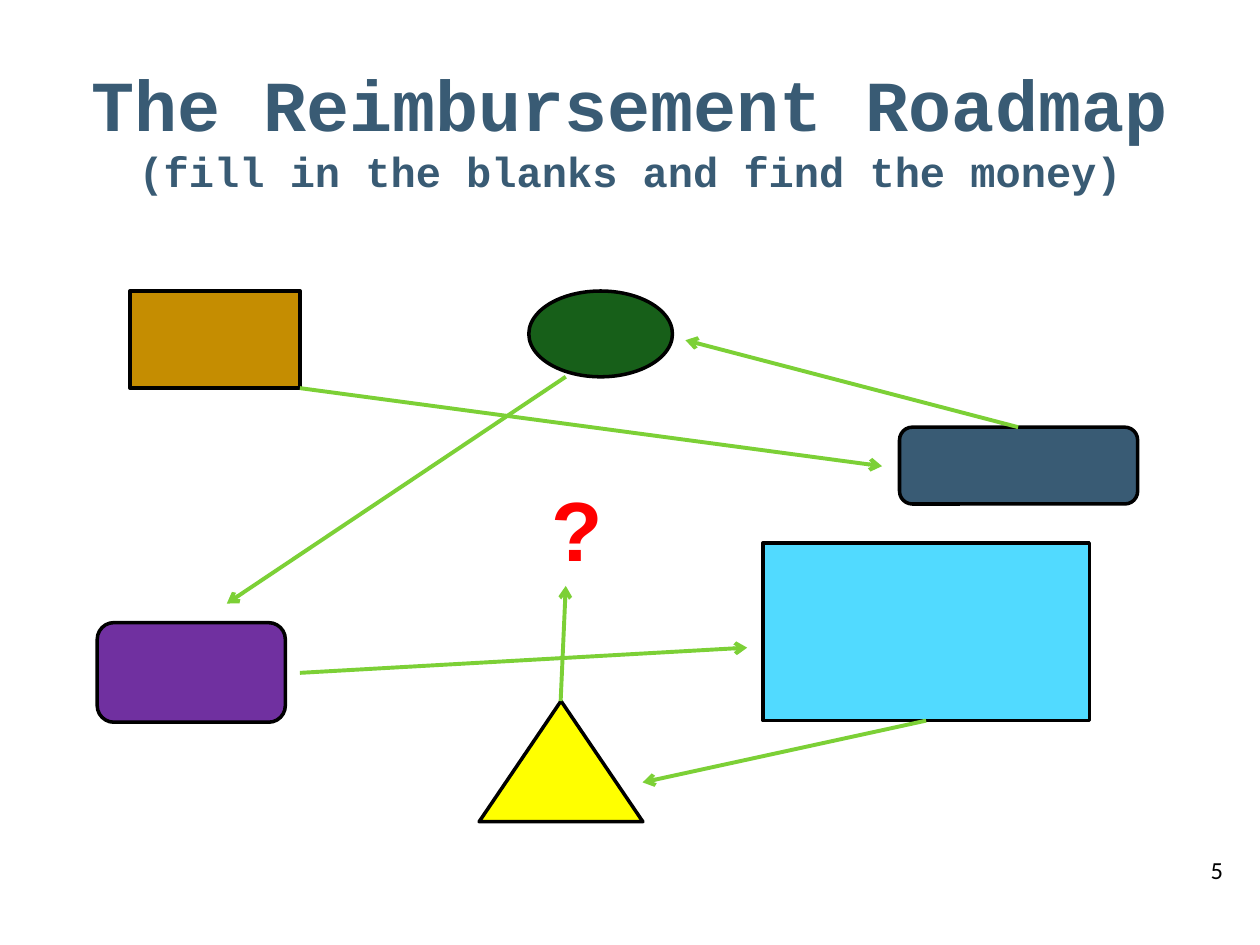
import pptx
import pptx.util
import pptx.dml.color
import pptx.enum.shapes
import pptx.enum.text
import pptx.oxml.ns
import lxml.etree

Pt = pptx.util.Pt
SHAPE = pptx.enum.shapes.MSO_SHAPE

COLORS = {
    "slate": "395B74", "ochre": "C58D01", "green": "175F19", "cyan": "51DAFF",
    "purple": "7030A0", "yellow": "FFFF00", "lime": "7CD036", "red": "FF0000",
    "black": "000000",
}
TITLE = [("The Reimbursement Roadmap", 41), ("(fill in the blanks and find the money)", 24)]
TITLE_BOX = (36, 34.6, 648, 77)
STOPS = [
    (SHAPE.RECTANGLE, "ochre", (74.2, 166.3, 97.2, 55.4)),
    (SHAPE.OVAL, "green", (302.2, 166.3, 82.1, 49)),
    (SHAPE.RECTANGLE, "cyan", (436, 310.3, 186.5, 101.5)),
    (SHAPE.ROUNDED_RECTANGLE, "purple", (55.6, 355.8, 107.5, 56.9)),
    (SHAPE.ROUNDED_RECTANGLE, "slate", (514, 244.1, 136.1, 43.9)),
    (SHAPE.ISOSCELES_TRIANGLE, "yellow", (273.8, 400.6, 93.6, 69)),
]
ARROWS = [
    ((171.4, 221.8), (504, 266.4)),
    ((323.3, 215.3), (129.6, 344.9)),
    ((581.8, 244.1), (391.7, 194.4)),
    ((171.4, 384.5), (427, 370.1)),
    ((529.2, 411.8), (367.2, 447.1)),
    ((320.4, 400.6), (323.3, 334.8)),
]
LABELS = [
    ("?", (308.2, 269.3, 59, 65.5), "Arial", 48, "red", True),
    ("5", (684.7, 485.3, 41.8, 55.4), "Calibri", 14, "black", False),
]


def color(name):
    return pptx.dml.color.RGBColor.from_string(COLORS[name])


def set_font(font, name, size, color_name, bold):
    font.name = name
    font.size = Pt(size)
    font.bold = bold
    font.color.rgb = color(color_name)


def add_title(slide):
    title = slide.shapes.title
    title.left, title.top, title.width, title.height = map(Pt, TITLE_BOX)
    title.text_frame.word_wrap = True
    title.text_frame.vertical_anchor = pptx.enum.text.MSO_ANCHOR.MIDDLE
    paragraph = title.text_frame.paragraphs[0]
    paragraph.alignment = pptx.enum.text.PP_ALIGN.CENTER
    for index, (text, size) in enumerate(TITLE):
        if index:
            paragraph.add_line_break()
        run = paragraph.add_run()
        run.text = text
        set_font(run.font, "Courier New", size, "slate", True)


def add_stop(slide, kind, fill, box):
    shape = slide.shapes.add_shape(kind, *map(Pt, box))
    shape.shadow.inherit = False
    shape.fill.solid()
    shape.fill.fore_color.rgb = color(fill)
    shape.line.color.rgb = color("black")
    shape.line.width = Pt(2)


def add_arrow(slide, start, end):
    connector = slide.shapes.add_connector(
        pptx.enum.shapes.MSO_CONNECTOR.STRAIGHT, *map(Pt, start + end))
    connector.line.color.rgb = color("lime")
    connector.line.width = Pt(2.25)
    qn = pptx.oxml.ns.qn
    lxml.etree.SubElement(connector.line._get_or_add_ln(), qn("a:tailEnd"), type="arrow")
    lxml.etree.SubElement(connector._element.spPr, qn("a:effectLst"))


def add_label(slide, text, box, font, size, color_name, bold):
    frame = slide.shapes.add_textbox(*map(Pt, box)).text_frame
    frame.word_wrap = True
    paragraph = frame.paragraphs[0]
    paragraph.text = text
    set_font(paragraph.font, font, size, color_name, bold)


def main():
    presentation = pptx.Presentation()
    presentation.slide_width, presentation.slide_height = Pt(720), Pt(540)
    slide = presentation.slides.add_slide(presentation.slide_layouts[5])
    add_title(slide)
    for stop in STOPS:
        add_stop(slide, *stop)
    for arrow in ARROWS:
        add_arrow(slide, *arrow)
    for label in LABELS:
        add_label(slide, *label)
    presentation.save("out.pptx")


if __name__ == "__main__":
    main()
